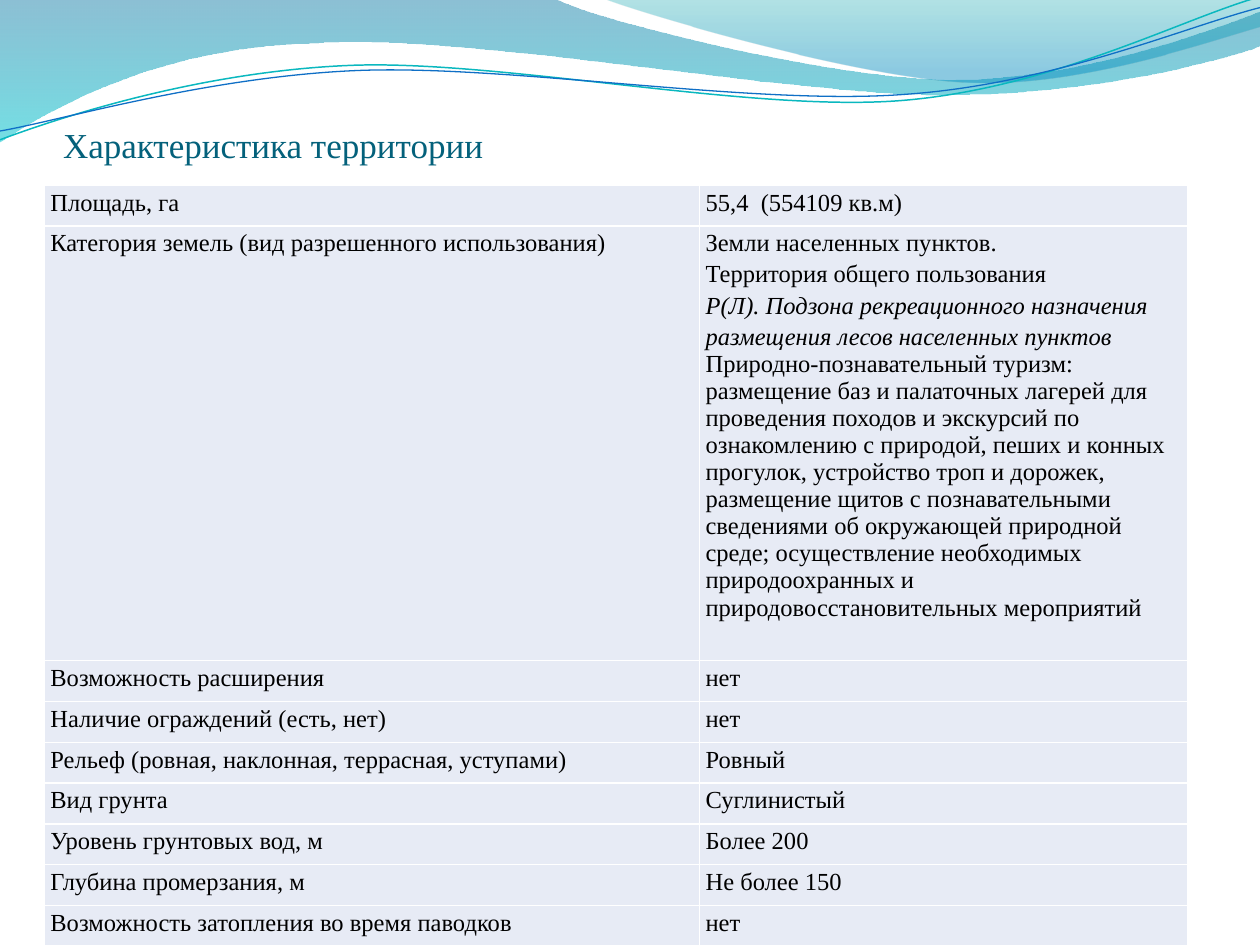
from math import cos, radians, sin

from lxml import etree
from pptx import Presentation
from pptx.dml.color import RGBColor
from pptx.enum.text import MSO_ANCHOR, MSO_AUTO_SIZE, PP_ALIGN
from pptx.oxml import parse_xml
from pptx.oxml.ns import nsdecls, qn
from pptx.util import Inches, Pt

WHITE = RGBColor(0xFF, 0xFF, 0xFF)
BLACK = RGBColor(0x00, 0x00, 0x00)
TITLE_TEAL = RGBColor(0x04, 0x61, 0x7B)
CELL_FILL = RGBColor(0xE7, 0xEB, 0xF5)
DEEP_BLUE = RGBColor(0x00, 0x74, 0xA1)
TURQUOISE = RGBColor(0x00, 0xC6, 0xCF)
SEA_GREEN = RGBColor(0x00, 0xA1, 0xA9)
SKY_BLUE = RGBColor(0x00, 0x8B, 0xBF)
LINE_TEAL = RGBColor(0x0A, 0xB8, 0xBF)
LINE_BLUE = RGBColor(0x0F, 0x6F, 0xC6)

# Outlines in inches: a pair is a straight step, six numbers are a Bezier curve.
BIG_WAVE = [
    (0, 0), (4.4, -0.01),
    (4.76, 0.17, 6.64, 0.63, 7.58, 0.63), (8.53, 0.63, 9.58, 0.26, 10, 0.09),
    (10.01, 0.36),
    (9.83, 0.44, 8.7, 0.76, 7.46, 0.75), (6.22, 0.75, 3.82, 0.28, 2.57, 0.34),
    (1.29, 0.36, 0.46, 0.83, -0.01, 1.13), (0, 0),
]
SMALL_WAVE = [
    (4.79, -0.01),
    (5.09, 0.11, 6.82, 0.62, 7.69, 0.65), (8.56, 0.69, 9.61, 0.32, 10, 0.21),
    (10, 0), (4.79, -0.01),
]
TEAL_CURVE = [
    (0, 1.11),
    (0.48, 0.93, 1.58, 0.57, 2.77, 0.52), (3.95, 0.47, 5.93, 0.89, 7.13, 0.8),
    (8.33, 0.71, 9.38, 0.15, 9.98, -0.02),
]
BLUE_CURVE = [
    (0, 1.04),
    (0.47, 0.96, 1.64, 0.61, 2.83, 0.56), (4.03, 0.51, 5.97, 0.84, 7.17, 0.75),
    (8.36, 0.67, 9.41, 0.21, 10, 0.06),
]
CURVE_ROTATION = 357.3

LAND_USE = [
    ("Земли населенных пунктов.", {}),
    ("Территория общего пользования", {}),
    ("Р(Л). Подзона рекреационного назначения размещения лесов населенных пунктов",
     {"italic": True}),
    ("Природно-познавательный туризм: размещение баз и палаточных лагерей для "
     "проведения походов и экскурсий по ознакомлению с природой, пеших и конных "
     "прогулок, устройство троп и дорожек, размещение щитов с познавательными "
     "сведениями об окружающей природной среде; осуществление необходимых "
     "природоохранных и природовосстановительных мероприятий",
     {"line_spacing": 1.0}),
]
TERRITORY = [
    ("Площадь, га", "55,4  (554109 кв.м)"),
    ("Категория земель (вид разрешенного использования)", LAND_USE),
    ("Возможность расширения", "нет"),
    ("Наличие ограждений (есть, нет)", "нет"),
    ("Рельеф (ровная, наклонная, террасная, уступами)", "Ровный"),
    ("Вид грунта", "Суглинистый"),
    ("Уровень грунтовых вод, м", "Более 200"),
    ("Глубина промерзания, м", "Не более 150"),
    ("Возможность затопления во время паводков", "нет"),
]
COLUMN_WIDTHS = (5.2, 3.88)
TABLE_HEIGHT = 6.04
LAND_USE_HEIGHT = 3.45
ROW_HEIGHT = (TABLE_HEIGHT - LAND_USE_HEIGHT) / (len(TERRITORY) - 1)


def write_text(paragraph, text, size=14, color=BLACK, italic=False,
               align=PP_ALIGN.LEFT, line_spacing=1.15, font="Times New Roman"):
    paragraph.alignment = align
    paragraph.line_spacing = line_spacing
    run = paragraph.add_run()
    run.text = text
    run.font.name = font
    run.font.size = Pt(size)
    run.font.bold = False
    run.font.italic = italic
    run.font.color.rgb = color


class SlideBuilder:
    def __init__(self, slide):
        self.slide = slide

    def outline(self, steps, box, rotation=0):
        """Draw steps in a box; the steps say where points lie after its rotation."""
        left, top, width, height = box
        corner = Inches(left + width), Inches(top + height)
        builder = self.slide.shapes.build_freeform(Inches(left), Inches(top), scale=1.0)
        builder.add_line_segments([corner], close=False)
        shape = builder.convert_to_shape()
        shape.shadow.inherit = False
        shape.rotation = rotation
        cosine, sine = cos(radians(-rotation)), sin(radians(-rotation))
        outline = shape.element.spPr.find(".//" + qn("a:path"))
        for child in list(outline):
            outline.remove(child)
        for index, step in enumerate(steps):
            kind = "cubicBezTo" if len(step) == 6 else "lnTo" if index else "moveTo"
            command = etree.SubElement(outline, qn(f"a:{kind}"))
            for x, y in zip(step[::2], step[1::2]):
                dx, dy = x - left - width / 2, y - top - height / 2
                local_x = width / 2 + dx * cosine - dy * sine
                local_y = height / 2 + dx * sine + dy * cosine
                etree.SubElement(command, qn("a:pt"),
                                 x=str(int(Inches(local_x))), y=str(int(Inches(local_y))))
        if steps[0] == steps[-1]:
            etree.SubElement(outline, qn("a:close"))
        return shape

    def wave(self, steps, box, stops):
        """Draw a filled wave; stops hold position, colour and opacity in percent."""
        shape = self.outline(steps, box)
        shape.line.fill.background()
        shape.fill.gradient()
        shape.fill.gradient_angle = 270
        for stop, (position, color, _) in zip(shape.fill.gradient_stops, stops):
            stop.position = position / 100
            stop.color.rgb = color
        color_elements = shape.element.spPr.findall(".//" + qn("a:srgbClr"))
        for element, (_, _, opacity) in zip(color_elements, stops):
            etree.SubElement(element, qn("a:alpha"), val=str(opacity * 1000))

    def curve(self, steps, box, color, width):
        shape = self.outline(steps, box, CURVE_ROTATION)
        shape.fill.background()
        shape.line.color.rgb = color
        shape.line.width = Pt(width)

    def title(self, text, left, top, width, height):
        title = self.slide.shapes.title
        title.left, title.top = Inches(left), Inches(top)
        title.width, title.height = Inches(width), Inches(height)
        frame = title.text_frame
        frame.word_wrap = True
        frame.auto_size = MSO_AUTO_SIZE.NONE
        frame.vertical_anchor = MSO_ANCHOR.BOTTOM
        frame.margin_left = frame.margin_right = frame.margin_bottom = 0
        frame.margin_top = Inches(0.05)
        write_text(frame.paragraphs[0], text, size=20, color=TITLE_TEAL, line_spacing=1.0)

    def cell(self, cell, content):
        cell.margin_left = cell.margin_right = Inches(0.05)
        cell.margin_top = cell.margin_bottom = 0
        properties = cell._tc.get_or_add_tcPr()
        for side in ("lnL", "lnR", "lnT", "lnB"):
            properties.append(parse_xml(
                f'<a:{side} {nsdecls("a")} w="{Pt(1)}"><a:solidFill>'
                f'<a:srgbClr val="{WHITE}"/></a:solidFill></a:{side}>'))
        cell.fill.solid()
        cell.fill.fore_color.rgb = CELL_FILL
        if isinstance(content, str):
            content = [(content, {"align": PP_ALIGN.JUSTIFY})]
        frame = cell.text_frame
        for index, (text, style) in enumerate(content):
            paragraph = frame.add_paragraph() if index else frame.paragraphs[0]
            write_text(paragraph, text, **style)

    def table(self, rows, left, top):
        table = self.slide.shapes.add_table(
            len(rows), len(COLUMN_WIDTHS), Inches(left), Inches(top),
            Inches(sum(COLUMN_WIDTHS)), Inches(TABLE_HEIGHT)).table
        table.first_row = table.horz_banding = False
        for column, width in zip(table.columns, COLUMN_WIDTHS):
            column.width = Inches(width)
        for row, contents in zip(table.rows, rows):
            row.height = Inches(LAND_USE_HEIGHT if contents[1] is LAND_USE else ROW_HEIGHT)
            for cell, content in zip(row.cells, contents):
                self.cell(cell, content)


def main():
    presentation = Presentation()
    presentation.slide_width, presentation.slide_height = Inches(10), Inches(7.5)
    builder = SlideBuilder(presentation.slides.add_slide(presentation.slide_layouts[5]))
    builder.wave(BIG_WAVE, (-0.01, -0.01, 10.02, 1.14),
                 [(0, DEEP_BLUE, 45), (100, TURQUOISE, 55)])
    builder.wave(SMALL_WAVE, (4.79, -0.01, 5.21, 0.7),
                 [(0, SEA_GREEN, 30), (80, SKY_BLUE, 45)])
    builder.curve(TEAL_CURVE, (-0.02, 0.22, 10.02, 0.71), LINE_TEAL, 0.85)
    builder.curve(BLUE_CURVE, (-0.02, 0.3, 10.03, 0.58), LINE_BLUE, 0.75)
    builder.title("Характеристика территории", 0.5, 0.77, 9, 0.54)
    builder.table(TERRITORY, 0.35, 1.47)
    presentation.save("out.pptx")


if __name__ == "__main__":
    main()
